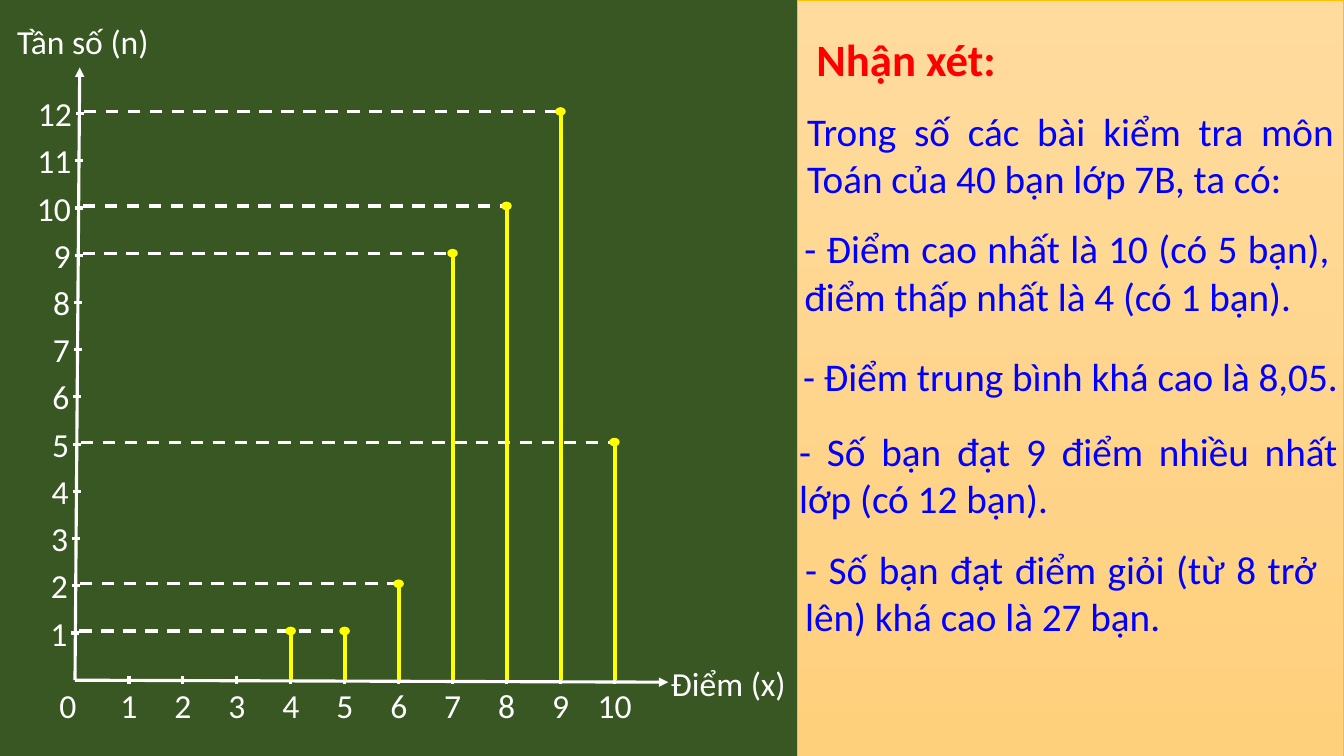
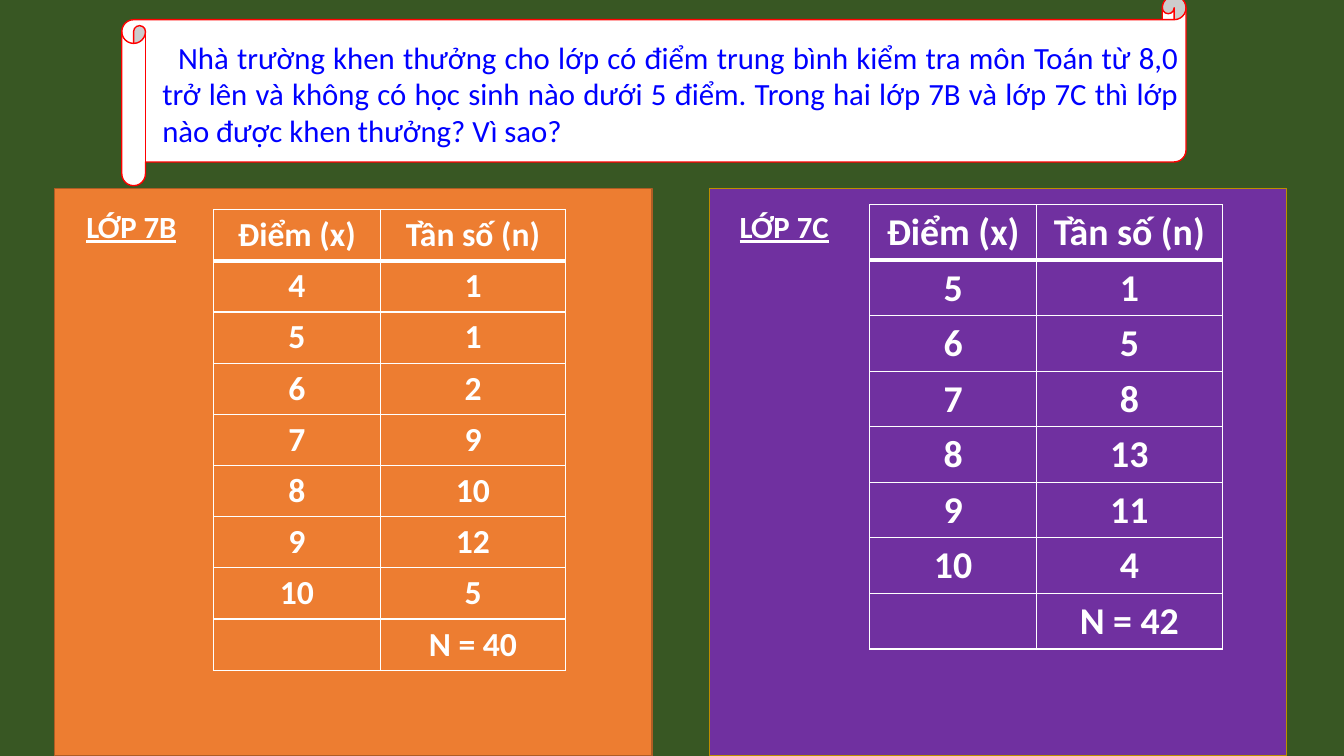
from lxml.etree import SubElement
from pptx import Presentation
from pptx.dml.color import RGBColor
from pptx.enum.dml import MSO_LINE
from pptx.enum.shapes import MSO_CONNECTOR, MSO_SHAPE
from pptx.enum.text import MSO_ANCHOR, MSO_AUTO_SIZE, PP_ALIGN
from pptx.oxml.ns import qn
from pptx.util import Cm, Pt

COLORS = {
    "board": "385723", "chalk": "FFFFFF", "bar": "FFFF00",
    "note_top": "FFDB9E", "note_bottom": "FFD07C", "note_edge": "FFC000",
    "heading": "FF0000", "ink": "0000FF", "scroll_edge": "FF0000",
    "orange": "ED7D31", "orange_edge": "AF5C24",
    "purple": "7030A0", "purple_edge": "BD8E00",
}
FONT = "Calibri"
AXIS_X, AXIS_Y = "Điểm (x)", "Tần số (n)"

# Score -> number of pupils
CLASS_7B = {4: 1, 5: 1, 6: 2, 7: 9, 8: 10, 9: 12, 10: 5}
CLASS_7C = {5: 1, 6: 5, 7: 8, 8: 13, 9: 11, 10: 4}

# Graph geometry in cm; the frequency axis leans slightly to the right
ORIGIN_X, ORIGIN_Y = 1.89, 17.14
STEP_X, STEP_Y = 1.36, 1.19
LEAN = 0.01
TICK = 0.1
MAX_SCORE, MAX_COUNT = 10, 12

# Remarks: left, top, width in cm, text
REMARKS = [
    (20.09, 2.59, 13.77, "Trong số các bài kiểm tra môn Toán của 40 bạn lớp 7B, ta có:"),
    (20.02, 5.54, 13.74, "- Điểm cao nhất là 10 (có 5 bạn), điểm thấp nhất là 4 (có 1 bạn)."),
    (19.99, 8.76, 14, "- Điểm trung bình khá cao là 8,05."),
    (19.89, 10.64, 14.07, "- Số bạn đạt 9 điểm nhiều nhất lớp (có 12 bạn)."),
    (20.04, 13.61, 13.39, "- Số bạn đạt điểm giỏi (từ 8 trở lên) khá cao là 27 bạn."),
]
QUESTION = ("Nhà trường khen thưởng cho lớp có điểm trung bình kiểm tra môn Toán "
            "từ 8,0 trở lên và không có học sinh nào dưới 5 điểm. Trong hai lớp 7B "
            "và lớp 7C thì lớp nào được khen thưởng? Vì sao?")


def rgb(name):
    return RGBColor.from_string(COLORS[name])


def write(frame, text, size, color, align=PP_ALIGN.LEFT, bold=False, underline=False):
    """Put one formatted run into the first paragraph of a text frame."""
    paragraph = frame.paragraphs[0]
    paragraph.alignment = align
    run = paragraph.add_run()
    run.text = text
    font = run.font
    font.name, font.size, font.bold = FONT, Pt(size), bold
    font.underline = underline
    font.color.rgb = rgb(color)
    return paragraph


def add_text(slide, left, top, width, height, text, size, color, **style):
    box = slide.shapes.add_textbox(Cm(left), Cm(top), Cm(width), Cm(height))
    box.text_frame.word_wrap = True
    return write(box.text_frame, text, size, color, **style)


def add_block(slide, kind, left, top, width, height, fill, edge, weight=1):
    block = slide.shapes.add_shape(kind, Cm(left), Cm(top), Cm(width), Cm(height))
    block.shadow.inherit = False
    block.fill.solid()
    block.fill.fore_color.rgb = rgb(fill)
    block.line.color.rgb = rgb(edge)
    block.line.width = Pt(weight)
    return block


def add_line(slide, start, end, color="chalk", weight=2.25, dashed=False, arrow=False):
    ends = [Cm(value) for value in (*start, *end)]
    connector = slide.shapes.add_connector(MSO_CONNECTOR.STRAIGHT, *ends)
    connector.line.color.rgb = rgb(color)
    connector.line.width = Pt(weight)
    if dashed:
        connector.line.dash_style = MSO_LINE.DASH
    properties = connector.element.spPr
    if arrow:
        SubElement(properties.find(qn("a:ln")), qn("a:tailEnd"), type="triangle")
    SubElement(properties, qn("a:effectLst"))


def score_x(score):
    return ORIGIN_X + STEP_X * score


def count_y(count):
    return ORIGIN_Y - STEP_Y * count


def axis_x(count):
    return ORIGIN_X + LEAN * count


def add_axes(slide):
    # Frequency axis
    add_line(slide, (ORIGIN_X, ORIGIN_Y), (axis_x(MAX_COUNT), 1.7), arrow=True)
    for count in range(1, MAX_COUNT + 1):
        x, y = axis_x(count), count_y(count)
        add_line(slide, (x - TICK, y), (x + TICK, y))
        add_text(slide, x - 1.55, y - 0.64, 1.6, 1.28, str(count), 24, "chalk",
                 align=PP_ALIGN.RIGHT)
    add_text(slide, 0.18, 0.41, 4, 1.28, AXIS_Y, 24, "chalk")

    # Score axis
    add_line(slide, (ORIGIN_X, ORIGIN_Y), (16.84, ORIGIN_Y + 0.05), arrow=True)
    for score in range(MAX_SCORE + 1):
        x = score_x(score)
        if score:
            add_line(slide, (x, ORIGIN_Y - TICK), (x, ORIGIN_Y + TICK))
        label_x = x if score else x - 0.18
        add_text(slide, label_x - 0.8, ORIGIN_Y, 1.6, 1.28, str(score), 24, "chalk",
                 align=PP_ALIGN.CENTER)
    add_text(slide, 16.66, 16.59, 3.6, 1.28, AXIS_X, 24, "chalk")


def add_bars(slide, frequencies):
    # One guide per frequency, drawn to the furthest score that has it
    furthest = {count: score for score, count in frequencies.items()}
    for count, score in furthest.items():
        y = count_y(count) - 0.05
        add_line(slide, (axis_x(count) + TICK, y), (score_x(score), y), dashed=True)
    for score, count in frequencies.items():
        x, y = score_x(score), count_y(count) - 0.05
        add_line(slide, (x, y), (x, ORIGIN_Y), "bar", 3)
        add_block(slide, MSO_SHAPE.OVAL, x - 0.12, y - 0.09, 0.23, 0.18, "bar", "bar")


def add_cell_borders(cell, weights):
    properties = cell._tc.get_or_add_tcPr()
    for side, weight in weights.items():
        border = SubElement(properties, qn(f"a:ln{side}"), w=str(Pt(weight)))
        fill = SubElement(border, qn("a:solidFill"))
        SubElement(fill, qn("a:srgbClr"), val=COLORS["chalk"])


def add_frequency_table(slide, left, top, row_height, frequencies, size, fill):
    rows = [(AXIS_X, AXIS_Y), *frequencies.items(),
            ("", f"N = {sum(frequencies.values())}")]
    widths = (4.2, 4.68)
    table = slide.shapes.add_table(len(rows), 2, Cm(left), Cm(top), Cm(sum(widths)),
                                   Cm(row_height * len(rows))).table
    for column, width in zip(table.columns, widths):
        column.width = Cm(width)
    for r, row in enumerate(rows):
        table.rows[r].height = Cm(row_height)
        for c, value in enumerate(row):
            cell = table.cell(r, c)
            cell.margin_top = cell.margin_bottom = Cm(0.1)
            cell.vertical_anchor = MSO_ANCHOR.MIDDLE
            add_cell_borders(cell, {"L": 1, "R": 1, "T": 3 if r == 1 else 1,
                                    "B": 3 if r == 0 else 1})
            cell.fill.solid()
            cell.fill.fore_color.rgb = rgb(fill)
            if value != "":
                write(cell.text_frame, str(value), size, "chalk",
                      align=PP_ALIGN.CENTER, bold=True)


def add_class_panel(slide, left, width, name, name_left, color):
    add_block(slide, MSO_SHAPE.RECTANGLE, left, 4.75, width, 14.3, color, f"{color}_edge")
    add_text(slide, name_left, 5.11, 3.05, 1.19, name, 22, "chalk",
             bold=True, underline=True)


def build_remarks_slide(prs):
    slide = prs.slides.add_slide(prs.slide_layouts[5])

    # Note panel, kept behind the title
    panel = add_block(slide, MSO_SHAPE.RECTANGLE, 20.09, 0, 13.77, 19.05,
                      "note_top", "note_edge", 0.5)
    panel.fill.gradient()
    panel.fill.gradient_angle = 270
    for stop, color in zip(panel.fill.gradient_stops, ("note_top", "note_bottom")):
        stop.color.rgb = rgb(color)
    heading = slide.shapes.title
    heading.element.addprevious(panel.element)

    # Title
    heading.left, heading.top = Cm(20.32), Cm(0.66)
    heading.width, heading.height = Cm(13.5), Cm(1.63)
    heading.text_frame.auto_size = MSO_AUTO_SIZE.NONE
    write(heading.text_frame, "Nhận xét:", 32, "heading", bold=True)

    # Graph and remarks
    add_axes(slide)
    add_bars(slide, CLASS_7B)
    for left, top, width, remark in REMARKS:
        add_text(slide, left, top, width, 2.64, remark, 28, "ink", align=PP_ALIGN.JUSTIFY)


def build_comparison_slide(prs):
    slide = prs.slides.add_slide(prs.slide_layouts[6])

    # Two classes
    add_class_panel(slide, 1.37, 15.06, "LỚP 7B", 1.93, "orange")
    add_class_panel(slide, 17.88, 14.55, "LỚP 7C", 18.39, "purple")
    add_frequency_table(slide, 5.38, 5.28, 1.29, CLASS_7B, 24, "orange")
    add_frequency_table(slide, 21.92, 5.16, 1.4, CLASS_7C, 27, "purple")

    # Question on a scroll
    add_block(slide, MSO_SHAPE.HORIZONTAL_SCROLL, 3.07, -0.1, 26.82, 4.78,
              "chalk", "scroll_edge")
    question = add_text(slide, 3.84, 0.84, 26.11, 3.07, QUESTION, 22, "ink",
                        align=PP_ALIGN.JUSTIFY)
    question._p.get_or_add_pPr().set("indent", str(Cm(0.4)))


def main():
    prs = Presentation()
    prs.slide_width, prs.slide_height = Cm(33.87), Cm(19.05)
    board = prs.slide_master.background.fill
    board.solid()
    board.fore_color.rgb = rgb("board")
    build_remarks_slide(prs)
    build_comparison_slide(prs)
    prs.save("out.pptx")


if __name__ == "__main__":
    main()
